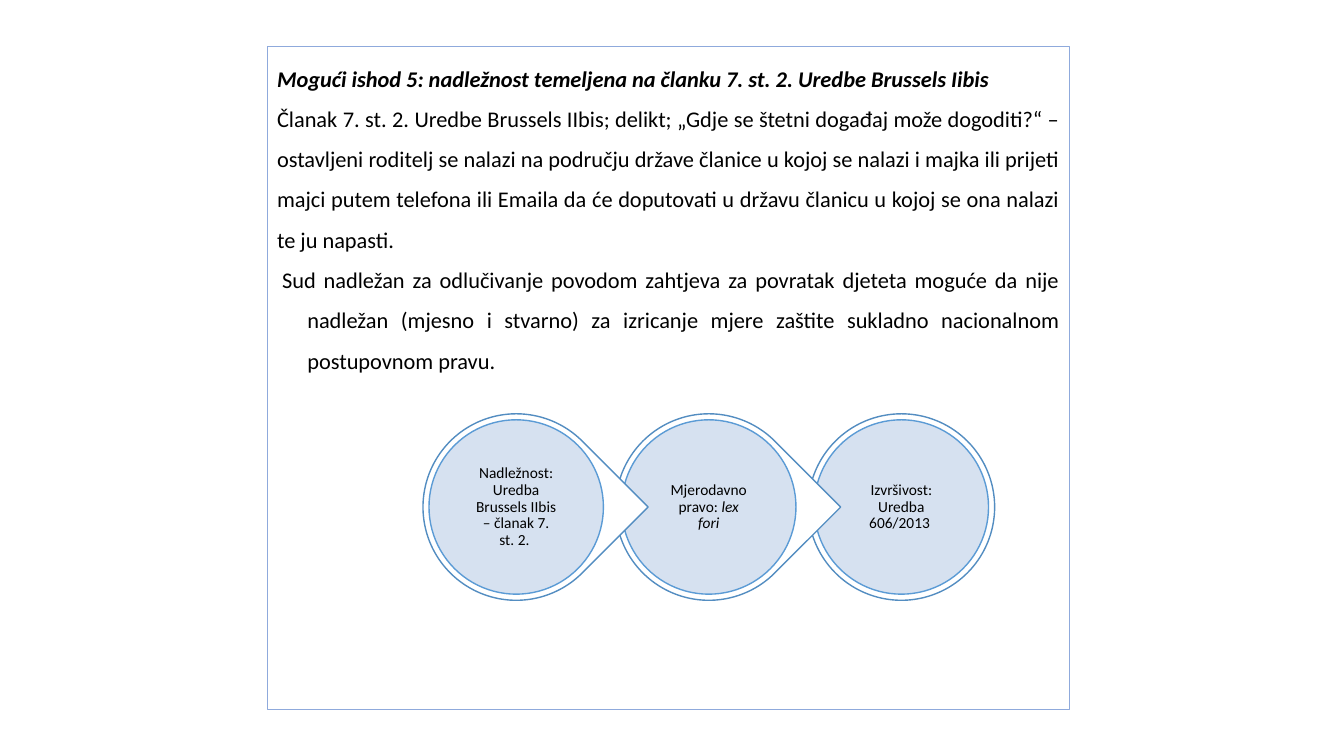
from dataclasses import dataclass

from lxml import etree
from pptx import Presentation
from pptx.dml.color import RGBColor
from pptx.enum.shapes import MSO_SHAPE as SHAPE
from pptx.enum.text import MSO_ANCHOR as ANCHOR, PP_ALIGN as ALIGN
from pptx.oxml.ns import qn
from pptx.util import Inches, Pt


@dataclass(frozen=True)
class Theme:
    font: str = "Calibri"
    body_size: int = 16
    label_size: int = 11
    text: str = "000000"
    paper: str = "FFFFFF"
    frame: str = "8FAADC"
    ring: str = "538DC1"
    disc: str = "D2DEEF"
    disc_line: str = "5B9BD5"


class SlideBuilder:
    def __init__(self, slide, theme):
        self.slide = slide
        self.theme = theme

    def shape(self, kind, box, fill, line, width=1, alpha=None):
        """Add a filled, outlined preset; alpha is the opacity in percent."""
        sp = self.slide.shapes.add_shape(kind, *map(Inches, box))
        sp.shadow.inherit = False
        sp.fill.solid()
        sp.fill.fore_color.rgb = RGBColor.from_string(fill)
        sp.line.color.rgb = RGBColor.from_string(line)
        sp.line.width = Pt(width)
        if alpha is not None:
            color = sp.fill._xPr.find(qn("a:solidFill"))[0]
            etree.SubElement(color, qn("a:alpha"), val=str(alpha * 1000))
        return sp

    def paragraph(self, p, runs, size, align, spacing):
        """Fill p with (text, bold, italic) runs."""
        p.alignment = align
        p.line_spacing = spacing
        for text, bold, italic in runs:
            r = p.add_run()
            r.text = text
            r.font.name = self.theme.font
            r.font.size = Pt(size)
            r.font.bold = bold
            r.font.italic = italic
            r.font.color.rgb = RGBColor.from_string(self.theme.text)

    def text_panel(self, box, paragraphs):
        """Add the framed panel; paragraphs are (runs, left margin, indent)."""
        t = self.theme
        sp = self.shape(SHAPE.RECTANGLE, box, t.paper, t.frame, 0.75)
        tf = sp.text_frame
        tf.word_wrap = True
        tf.vertical_anchor = ANCHOR.TOP
        for i, (runs, margin, indent) in enumerate(paragraphs):
            p = tf.add_paragraph() if i else tf.paragraphs[0]
            self.paragraph(p, runs, t.body_size, ALIGN.JUSTIFY, 1.5)
            pPr = p._p.get_or_add_pPr()
            pPr.set("marL", str(Inches(margin)))
            pPr.set("indent", str(Inches(indent)))

    def label(self, box, runs):
        tf = self.slide.shapes.add_textbox(*map(Inches, box)).text_frame
        tf.word_wrap = True
        tf.vertical_anchor = ANCHOR.MIDDLE
        tf.margin_left = tf.margin_right = Inches(0.02)
        tf.margin_top = tf.margin_bottom = Inches(0.02)
        self.paragraph(tf.paragraphs[0], runs, self.theme.label_size, ALIGN.CENTER, 0.9)

    def step(self, cx, cy, runs, points_on):
        """Add a ringed disc with a label; points_on aims the ring at the next step."""
        t = self.theme

        def square(side):
            return cx - side / 2, cy - side / 2, side, side

        kind = SHAPE.TEAR if points_on else SHAPE.OVAL
        ring = self.shape(kind, square(1.85), t.paper, t.ring)
        if points_on:
            ring.rotation = 45
        self.shape(SHAPE.OVAL, square(1.73), t.disc, t.disc_line, alpha=90)
        self.label(square(0.87), runs)


PARAGRAPHS = [
    ([("Mogući ishod 5: nadležnost temeljena na članku 7. st. 2. Uredbe Brussels Iibis",
       True, True)], 0, 0),
    ([("Članak 7. st. 2. Uredbe Brussels IIbis; delikt; „Gdje se štetni događaj može "
       "dogoditi?“ – ostavljeni roditelj se nalazi na području države članice u kojoj se "
       "nalazi i majka ili prijeti majci putem telefona ili Emaila da će doputovati u "
       "državu članicu u kojoj se ona nalazi te ju napasti.", False, False)], 0, 0),
    ([("Sud nadležan za odlučivanje povodom zahtjeva za povratak djeteta moguće da nije "
       "nadležan (mjesno i stvarno) za izricanje mjere zaštite sukladno nacionalnom "
       "postupovnom pravu.", False, False)], 0.3, -0.25),
]
STEPS = [
    [("Nadležnost: Uredba Brussels IIbis – članak 7. st. 2. ", False, False)],
    [("Mjerodavno pravo: ", False, False), ("lex fori", False, True)],
    [("Izvršivost: Uredba 606/2013 ", False, False)],
]
FIRST_X, STEP_GAP, STEP_Y = 5.12, 1.91, 5.03


def main():
    prs = Presentation()
    prs.slide_width, prs.slide_height = Inches(13.33), Inches(7.5)
    s = prs.slides.add_slide(prs.slide_layouts[6])
    builder = SlideBuilder(s, Theme())
    builder.text_panel((2.65, 0.46, 7.96, 6.58), PARAGRAPHS)
    last = len(STEPS) - 1
    # Drawn from the right so that each point overlaps the next step
    for i in range(last, -1, -1):
        builder.step(FIRST_X + i * STEP_GAP, STEP_Y, STEPS[i], points_on=i < last)
    prs.save("out.pptx")


if __name__ == "__main__":
    main()
